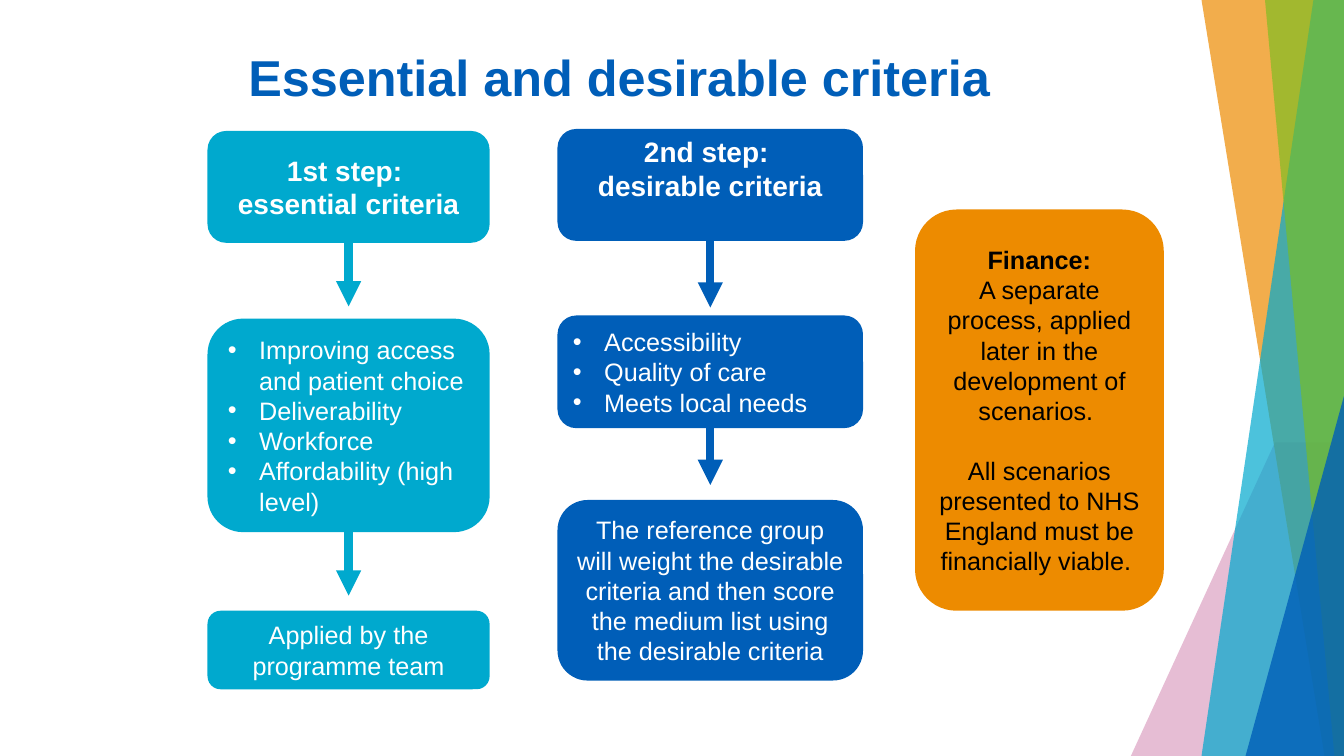
from lxml.etree import SubElement
from pptx import Presentation
from pptx.dml.color import RGBColor
from pptx.enum.shapes import MSO_CONNECTOR, MSO_SHAPE
from pptx.enum.text import MSO_ANCHOR, PP_ALIGN
from pptx.oxml.ns import qn
from pptx.util import Cm, Pt

BLUE = RGBColor(0x00, 0x5E, 0xB8)
CYAN = RGBColor(0x00, 0xA9, 0xCE)
ORANGE = RGBColor(0xED, 0x8B, 0x00)
PINK = RGBColor(0xAE, 0x25, 0x73)
GREEN = RGBColor(0x78, 0xBE, 0x20)
WHITE = RGBColor(0xFF, 0xFF, 0xFF)
BLACK = RGBColor(0x00, 0x00, 0x00)

FONT = "Arial"
WIDTH, HEIGHT = 33.87, 19.05
TITLE = "Essential and desirable criteria"

# Side panels: colour, opacity in percent, top left, top, bottom left (cm)
PANELS = [
    (PINK, 30, 32.13, 11.15, 28.5),
    (ORANGE, 70, 30.28, 0, 33.38),
    (CYAN, 70, 33.1, 0, 30.28),
    (GREEN, 65, 31.88, 0, 33.63),
]
CORNER_LEFT, CORNER_TOP = 31.39, 9.98

# Each step: top, height, arrow tip below (cm), kind of text, lines
COLUMNS = [
    {"color": CYAN, "left": 5.23, "width": 7.11, "steps": [
        (3.3, 2.82, 7.72, "heading", ["1st step: ", "essential criteria"]),
        (8.03, 5.38, 15.01, "bullets", [
            "Improving access and patient choice", "Deliverability",
            "Workforce", "Affordability (high level)"]),
        (15.39, 1.98, None, "text", ["Applied by the programme team"]),
    ]},
    {"color": BLUE, "left": 14.05, "width": 7.7, "steps": [
        (3.25, 2.82, 7.75, "raised heading", ["2nd step: ", "desirable criteria"]),
        (7.95, 2.84, 12.22, "bullets", [
            "Accessibility", "Quality of care", "Meets local needs"]),
        (12.6, 4.55, None, "text", [
            "The reference group will weight the desirable criteria and then "
            "score the medium list using the desirable criteria"]),
    ]},
]

# Finance paragraphs: text, bold, space before (pt)
FINANCE = [
    ("Finance:", True, 0),
    ("A separate process, applied later in the development of scenarios. ", False, 0),
    ("All scenarios presented to NHS England must be financially viable. ", False, 21),
]


def fill_plain(shape, color, opacity=100):
    shape.shadow.inherit = False
    shape.fill.solid()
    shape.fill.fore_color.rgb = color
    shape.line.fill.background()
    if opacity < 100:
        color_element = shape.fill._xPr.find(qn("a:solidFill"))[0]
        SubElement(color_element, qn("a:alpha")).set("val", str(opacity * 1000))


def add_panels(shapes):
    for color, opacity, top_left, top, bottom_left in PANELS:
        builder = shapes.build_freeform(Cm(top_left), Cm(top))
        builder.add_line_segments([
            (Cm(WIDTH), Cm(top)), (Cm(WIDTH), Cm(HEIGHT)), (Cm(bottom_left), Cm(HEIGHT))])
        fill_plain(builder.convert_to_shape(), color, opacity)
    corner = shapes.add_shape(
        MSO_SHAPE.ISOSCELES_TRIANGLE, Cm(CORNER_LEFT), Cm(CORNER_TOP),
        Cm(WIDTH - CORNER_LEFT), Cm(HEIGHT - CORNER_TOP))
    corner.adjustments[0] = 1
    fill_plain(corner, BLUE, 80)


def add_box(shapes, color, left, top, width, height):
    box = shapes.add_shape(
        MSO_SHAPE.ROUNDED_RECTANGLE, Cm(left), Cm(top), Cm(width), Cm(height))
    fill_plain(box, color)
    box.text_frame.word_wrap = True
    box.text_frame.vertical_anchor = MSO_ANCHOR.MIDDLE
    return box


def add_run(paragraph, text, size, color, bold=False):
    run = paragraph.add_run()
    run.text = text
    run.font.name = FONT
    run.font.size = Pt(size)
    run.font.bold = bold
    run.font.color.rgb = color


def next_paragraph(frame, index):
    return frame.add_paragraph() if index else frame.paragraphs[0]


def set_bullet(paragraph):
    properties = paragraph._p.get_or_add_pPr()
    properties.set("marL", str(Cm(0.79)))
    properties.set("indent", str(-Cm(0.79)))
    SubElement(properties, qn("a:buFont")).set("typeface", FONT)
    SubElement(properties, qn("a:buChar")).set("char", "•")


def write_step(frame, kind, lines):
    if kind.endswith("heading"):
        if kind.startswith("raised"):
            frame.margin_bottom = Cm(0.97)
        paragraph = frame.paragraphs[0]
        paragraph.alignment = PP_ALIGN.CENTER
        for index, line in enumerate(lines):
            if index:
                paragraph.add_line_break()
            add_run(paragraph, line, 20, WHITE, True)
        return
    for index, line in enumerate(lines):
        paragraph = next_paragraph(frame, index)
        if kind == "bullets":
            paragraph.alignment = PP_ALIGN.LEFT
            set_bullet(paragraph)
        else:
            paragraph.alignment = PP_ALIGN.CENTER
        add_run(paragraph, line, 18, WHITE)


def add_arrow(shapes, box, tip, color):
    center = box.left + box.width // 2
    arrow = shapes.add_connector(
        MSO_CONNECTOR.STRAIGHT, center, box.top + box.height, center, Cm(tip))
    arrow.begin_connect(box, 2)
    arrow.line.color.rgb = color
    arrow.line.width = Pt(6)
    SubElement(arrow.line._get_or_add_ln(), qn("a:tailEnd")).set("type", "triangle")
    SubElement(arrow._element.spPr, qn("a:effectLst"))


def main():
    presentation = Presentation()
    presentation.slide_width, presentation.slide_height = Cm(WIDTH), Cm(HEIGHT)
    slide = presentation.slides.add_slide(presentation.slide_layouts[5])
    shapes = slide.shapes
    add_panels(shapes)

    title = shapes.title
    title.left, title.top, title.width, title.height = Cm(1.88), Cm(0.89), Cm(27.46), Cm(2.06)
    title.text_frame.vertical_anchor = MSO_ANCHOR.MIDDLE
    paragraph = title.text_frame.paragraphs[0]
    paragraph.alignment = PP_ALIGN.CENTER
    add_run(paragraph, TITLE, 36, BLUE, True)

    for column in COLUMNS:
        color = column["color"]
        for top, height, tip, kind, lines in column["steps"]:
            box = add_box(shapes, color, column["left"], top, column["width"], height)
            write_step(box.text_frame, kind, lines)
            if tip:
                add_arrow(shapes, box, tip, color)

    finance = add_box(shapes, ORANGE, 23.06, 5.28, 6.27, 10.11)
    for index, (text, bold, space) in enumerate(FINANCE):
        paragraph = next_paragraph(finance.text_frame, index)
        paragraph.alignment = PP_ALIGN.CENTER
        paragraph.space_before = Pt(space)
        add_run(paragraph, text, 18, BLACK, bold)

    presentation.save("out.pptx")


if __name__ == "__main__":
    main()
